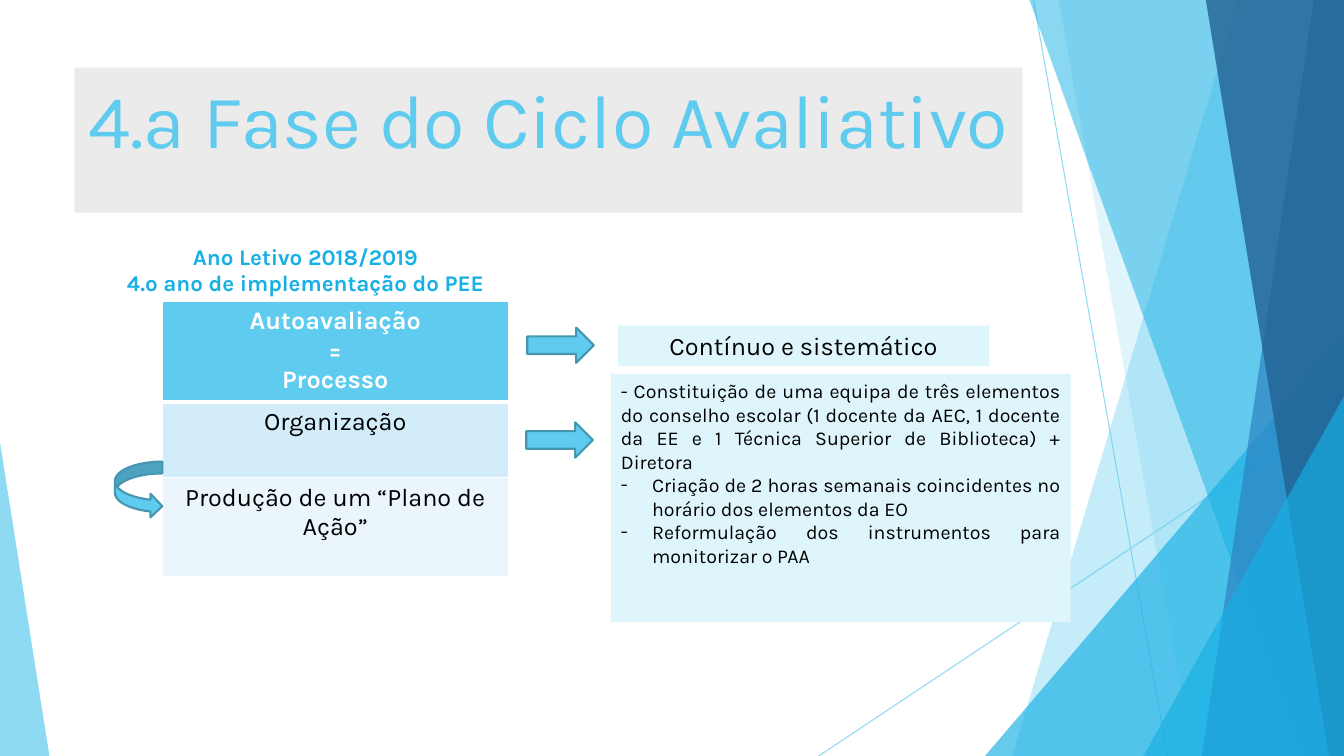
from lxml import etree
from pptx import Presentation
from pptx import util as u
from pptx.dml.color import RGBColor
from pptx.enum import shapes, text
from pptx.oxml import ns

FONT = "Karla"
SKY, BLUE, PALE, EDGE = "5FCBEF", "17B0E4", "DFF5FC", "4696B1"
WHITE, BLACK = "FFFFFF", "000000"
W, H = 13.33, 7.5
CENTER, JUSTIFY = text.PP_ALIGN.CENTER, text.PP_ALIGN.JUSTIFY


def rgb(color):
    return RGBColor.from_string(color)


def box_of(*lengths):
    return [u.Inches(n) for n in lengths]


def sub(parent, tag, **attrs):
    return etree.SubElement(parent, ns.qn(tag), attrs)


def paint(sp, fill, line=None, alpha=100):
    sp.shadow.inherit = False
    sp.fill.solid()
    sp.fill.fore_color.rgb = rgb(fill)
    if alpha < 100:
        set_alpha(sp, alpha)
    if line:
        sp.line.color.rgb = rgb(line)
        sp.line.width = u.Pt(1.5)
    else:
        sp.line.fill.background()


def set_alpha(sp, percent):
    color = next(sp.element.spPr.iter(ns.qn("a:srgbClr")))
    sub(color, "a:alpha", val=str(percent * 1000))


def write(tf, lines, size, color, align=CENTER, bold=False):
    tf.word_wrap = True
    tf.text = "\n".join(lines)
    for p in tf.paragraphs:
        p.alignment = align
        for r in p.runs:
            f = r.font
            f.name, f.size, f.bold = FONT, u.Pt(size), bold
            f.color.rgb = rgb(color)


def add_ray(s, x1, y1, x2, y2):
    line = s.shapes.add_connector(shapes.MSO_CONNECTOR.STRAIGHT, *box_of(x1, y1, x2, y2))
    line.line.color.rgb = rgb(SKY)
    line.line.width = u.Pt(0.75)
    set_alpha(line, 70)
    sub(line.element.spPr, "a:effectLst")


def add_band(s, top_x, bottom_x, color, alpha):
    """Fill the slide to the right of a slanted edge."""
    points = [box_of(x, y) for x, y in ((top_x, 0), (W, 0), (W, H), (bottom_x, H))]
    builder = s.shapes.build_freeform(*points[0], scale=1.0)
    builder.add_line_segments(points[1:], close=True)
    paint(builder.convert_to_shape(), color, alpha=alpha)


def add_corner(s, x, y, w, peak, color, alpha):
    """Place a right-angled triangle on the bottom edge; peak 0 is left, 1 right."""
    sp = s.shapes.add_shape(shapes.MSO_SHAPE.ISOSCELES_TRIANGLE, *box_of(x, y, w, H - y))
    sp.adjustments[0] = peak
    paint(sp, color, alpha=alpha)


def add_backdrop(s):
    add_ray(s, 10.25, 0, 11.58, H)
    add_ray(s, W, 4.03, 8.12, H)
    add_band(s, 12.28, 10.04, SKY, 36)
    add_band(s, 10.5, 11.83, SKY, 20)
    add_corner(s, 9.77, 3.33, 3.56, 1, BLUE, 66)
    add_band(s, 10.21, 12.91, BLUE, 50)
    add_band(s, 13.03, 11.92, "2E83C3", 70)
    add_band(s, 11.96, 13.18, "226292", 80)
    add_corner(s, 11.34, 3.93, 1.99, 1, BLUE, 66)
    add_corner(s, 0, 4.39, 0.49, 0, SKY, 70)


def add_title(s, x, y, w, h):
    title = s.shapes.title
    title.left, title.top, title.width, title.height = box_of(x, y, w, h)
    title.fill.solid()
    title.fill.fore_color.rgb = rgb("EBEBEB")
    tf = title.text_frame
    write(tf, ["4.ª Fase do Ciclo Avaliativo"], 54, SKY)
    tf.auto_size = text.MSO_AUTO_SIZE.NONE
    tf.vertical_anchor = text.MSO_ANCHOR.TOP


def add_year(s, x, y, w, h):
    tf = s.shapes.add_textbox(*box_of(x, y, w, h)).text_frame
    write(tf, ["Ano Letivo 2018/2019\v4.º ano de implementação do PEE"], 16, BLUE, bold=True)
    tf.vertical_anchor = text.MSO_ANCHOR.BOTTOM
    tf.paragraphs[0].space_before = u.Pt(10)


def set_borders(cell, bottom):
    tcPr = cell._tc.get_or_add_tcPr()
    for i, (side, width) in enumerate((("L", 1), ("R", 1), ("T", 1), ("B", bottom))):
        ln = etree.Element(ns.qn(f"a:ln{side}"), w=str(u.Pt(width)))
        sub(sub(ln, "a:solidFill"), "a:srgbClr", val=WHITE)
        tcPr.insert(i, ln)


def add_phases(s, x, y, w):
    rows = [
        (["Autoavaliação", "=", "Processo"], 0.98, SKY, WHITE, True),
        (["Organização"], 0.75, "D2ECF9", BLACK, False),
        (["Produção de um “Plano de Ação”"], 0.98, "EAF6FC", BLACK, False),
    ]
    height = sum(row[1] for row in rows)
    table = s.shapes.add_table(len(rows), 1, *box_of(x, y, w, height)).table
    for i, (lines, h, fill, color, head) in enumerate(rows):
        table.rows[i].height = u.Inches(h)
        cell = table.cell(i, 0)
        cell.fill.solid()
        cell.fill.fore_color.rgb = rgb(fill)
        set_borders(cell, 3 if head else 1)
        write(cell.text_frame, lines, 18, color, bold=head)


def add_arrow(s, kind, x, y, w, h):
    paint(s.shapes.add_shape(kind, *box_of(x, y, w, h)), SKY, EDGE)


def add_panel(s, box, lines, size, align):
    sp = s.shapes.add_shape(shapes.MSO_SHAPE.RECTANGLE, *box_of(*box))
    paint(sp, PALE)
    write(sp.text_frame, lines, size, BLACK, align)
    sp.text_frame.vertical_anchor = text.MSO_ANCHOR.TOP
    return sp.text_frame


def add_actions(s, x, y, w, h):
    tf = add_panel(s, (x, y, w, h), [
        "- Constituição de uma equipa de três elementos do conselho escolar "
        "(1 docente da AEC, 1 docente da EE e 1 Técnica Superior de Biblioteca) + Diretora",
        "Criação de 2 horas semanais coincidentes no horário dos elementos da EO",
        "Reformulação dos instrumentos para monitorizar o PAA",
    ], 14, JUSTIFY)
    indent = u.Inches(0.31)
    for p in tf.paragraphs[1:]:
        pPr = p._p.get_or_add_pPr()
        pPr.set("marL", str(indent))
        pPr.set("indent", str(-indent))
        sub(pPr, "a:buFont", typeface=FONT)
        sub(pPr, "a:buChar", char="-")


def main():
    prs = Presentation()
    prs.slide_width, prs.slide_height = box_of(W, H)
    s = prs.slides.add_slide(prs.slide_layouts[5])
    add_backdrop(s)
    add_title(s, 0.74, 0.67, 9.4, 1.44)
    add_year(s, 0.74, 2.36, 4.58, 0.63)
    add_phases(s, 1.61, 2.99, 3.43)
    add_arrow(s, shapes.MSO_SHAPE.CURVED_RIGHT_ARROW, 1.14, 4.58, 0.47, 0.56)
    add_panel(s, (6.13, 3.23, 3.68, 0.4), ["Contínuo e sistemático"], 18, CENTER)
    for x, y in ((5.23, 3.25), (5.22, 4.19)):
        add_arrow(s, shapes.MSO_SHAPE.RIGHT_ARROW, x, y, 0.66, 0.35)
    add_actions(s, 6.06, 3.71, 4.56, 2.46)
    prs.save("out.pptx")


if __name__ == "__main__":
    main()
